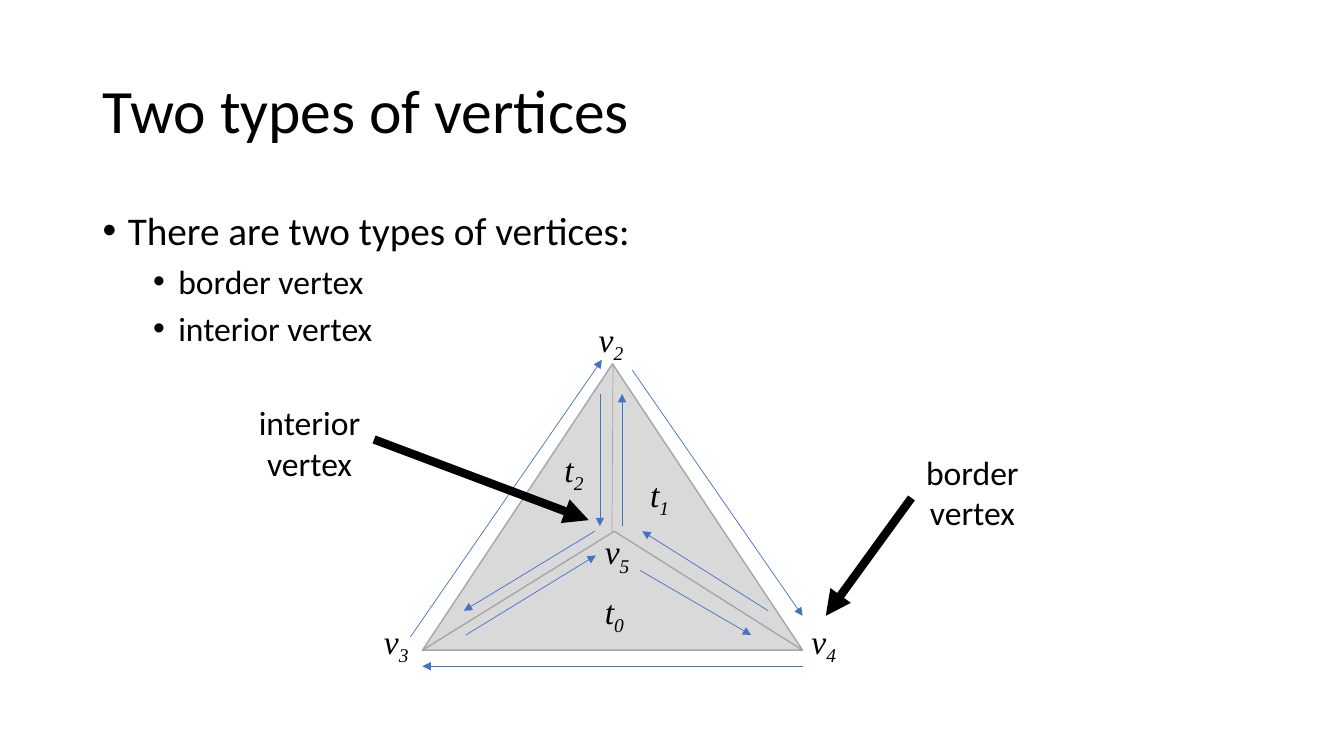
from lxml.etree import SubElement
from pptx import Presentation
from pptx.dml.color import RGBColor
from pptx.enum.shapes import MSO_CONNECTOR, MSO_SHAPE
from pptx.enum.text import MSO_ANCHOR, MSO_AUTO_SIZE, PP_ALIGN
from pptx.oxml.ns import qn
from pptx.util import Inches, Pt

COLORS = {"ink": "000000", "face": "D9D9D9", "edge": "A6A6A6", "halfedge": "4472C4"}
BODY_FONT, MATH_FONT = "Calibri", "Times New Roman"

TITLE = "Two types of vertices"
BULLETS = [
    ("There are two types of vertices:", 0, 28, 0.25, 10),
    ("border vertex", 1, 24, 0.75, 5),
    ("interior vertex", 1, 24, 0.75, 5),
]
FACES = [((4.19, 3.61, 3.77, 2.84), 0.5), ((4.19, 5.27, 3.77, 1.18), 0.505)]
SHARED_EDGE = ((6.08, 3.61), (6.07, 5.27))
SYMBOLS = [
    ("t", "2", 5.5, 4.4),
    ("t", "0", 5.9, 5.81),
    ("t", "1", 6.35, 4.65),
    ("v", "3", 3.71, 6.11),
    ("v", "2", 5.84, 3.11),
    ("v", "4", 7.95, 6.11),
    ("v", "5", 5.9, 5.22),
]
SYMBOL_WIDTHS = {"t": 0.41, "v": 0.47}
HALFEDGES = [
    ((4.07, 6.32), (5.97, 3.57)),
    ((7.96, 6.61), (4.19, 6.61)),
    ((6.27, 3.67), (7.96, 6.11)),
    ((6.17, 5.22), (6.17, 3.91)),
    ((5.95, 3.91), (5.95, 5.22)),
    ((5.9, 5.27), (4.6, 6.06)),
    ((4.62, 6.3), (5.91, 5.51)),
    ((7.62, 6.06), (6.37, 5.27)),
    ((6.35, 5.66), (7.45, 6.3)),
]
CALLOUTS = [
    ("interior\nvertex", (2.46, 3.94, 1.22, 0.91), (3.71, 4.36), (5.84, 5.16)),
    ("border\nvertex", (9.08, 4.43, 1.13, 0.91), (9.04, 4.94), (8.19, 6.11)),
]

deck = Presentation()
deck.slide_width, deck.slide_height = Inches(13.33), Inches(7.5)
slide = deck.slides.add_slide(deck.slide_layouts[6])


def rgb(name):
    return RGBColor.from_string(COLORS[name])


def style(run, size, font=BODY_FONT, italic=False):
    run.font.size = Pt(size)
    run.font.name = font
    run.font.italic = italic
    run.font.color.rgb = rgb("ink")


def add_text(box, text, wrap=True):
    frame = slide.shapes.add_textbox(*map(Inches, box)).text_frame
    frame.word_wrap = wrap
    frame.auto_size = MSO_AUTO_SIZE.NONE if wrap else MSO_AUTO_SIZE.SHAPE_TO_FIT_TEXT
    frame.text = text
    return frame


def add_line(start, end, color, width, arrow=True):
    line = slide.shapes.add_connector(MSO_CONNECTOR.STRAIGHT, *map(Inches, start + end))
    line.line.color.rgb = rgb(color)
    line.line.width = Pt(width)
    if arrow:
        SubElement(line.line._get_or_add_ln(), qn("a:tailEnd"), type="triangle")
    SubElement(line._element.spPr, qn("a:effectLst"))


def add_face(box, apex):
    face = slide.shapes.add_shape(MSO_SHAPE.ISOSCELES_TRIANGLE, *map(Inches, box))
    face.adjustments[0] = apex
    face.shadow.inherit = False
    face.fill.solid()
    face.fill.fore_color.rgb = rgb("face")
    face.line.color.rgb = rgb("edge")
    face.line.width = Pt(1)


def add_symbol(letter, index, left, top):
    frame = add_text((left, top, SYMBOL_WIDTHS[letter], 0.5), letter, wrap=False)
    paragraph = frame.paragraphs[0]
    subscript = paragraph.add_run()
    subscript.text = index
    for run in paragraph.runs:
        style(run, 24, MATH_FONT, italic=True)
    subscript._r.get_or_add_rPr().set("baseline", "-25000")


def add_callout(text, box, start, end):
    add_line(start, end, "ink", 6)
    for paragraph in add_text(box, text, wrap=False).paragraphs:
        paragraph.alignment = PP_ALIGN.CENTER
        style(paragraph.runs[0], 24)


heading = add_text((0.92, 0.4, 11.5, 1.45), TITLE)
heading.vertical_anchor = MSO_ANCHOR.MIDDLE
heading.paragraphs[0].line_spacing = 0.9
style(heading.paragraphs[0].runs[0], 44)

body = add_text((0.92, 2, 11.5, 4.76), "\n".join(bullet[0] for bullet in BULLETS))
for paragraph, (_, level, size, indent, gap) in zip(body.paragraphs, BULLETS):
    paragraph.level = level
    paragraph.space_before = Pt(gap)
    style(paragraph.runs[0], size)
    properties = paragraph._p.get_or_add_pPr()
    properties.set("marL", str(Inches(indent)))
    properties.set("indent", str(Inches(-0.25)))
    SubElement(properties, qn("a:buFont"), typeface="Arial")
    SubElement(properties, qn("a:buChar"), char="•")

for box, apex in FACES:
    add_face(box, apex)
add_line(*SHARED_EDGE, "edge", 0.5, arrow=False)
for symbol in SYMBOLS:
    add_symbol(*symbol)
for start, end in HALFEDGES:
    add_line(start, end, "halfedge", 0.5)
for callout in CALLOUTS:
    add_callout(*callout)

deck.save("out.pptx")
